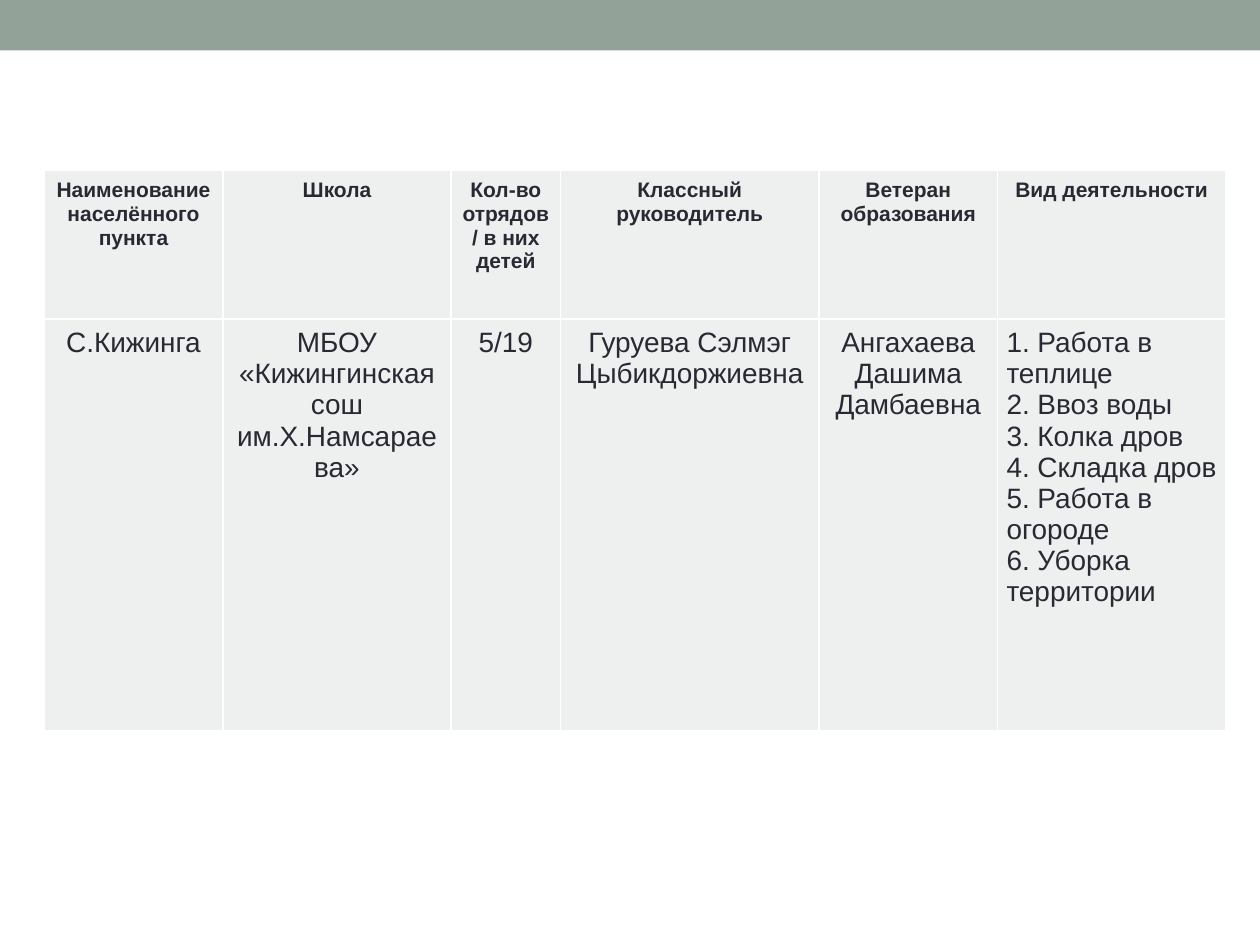
from dataclasses import dataclass

from lxml.etree import SubElement
from pptx import Presentation
from pptx.dml.color import RGBColor
from pptx.enum.shapes import MSO_SHAPE
from pptx.enum.text import PP_ALIGN
from pptx.oxml.ns import qn
from pptx.util import Inches, Pt


@dataclass(frozen=True)
class Theme:
    font: str = "Arial"
    ink: str = "292934"
    band: str = "93A299"
    cell: str = "EEF0EF"
    rule: str = "FFFFFF"
    head: int = 12
    body: int = 16


THEME = Theme()
COLS = [1.42, 1.81, 0.87, 2.05, 1.42, 1.81]
ROWS = [1.18, 3.27]
HEADS = [
    "Наименование населённого пункта",
    "Школа",
    "Кол-во отрядов / в них детей",
    "Классный руководитель",
    "Ветеран образования",
    "Вид деятельности",
]
FACTS = [
    "С.Кижинга",
    "МБОУ «Кижингинская сош им.Х.Намсараева»",
    "5/19",
    "Гуруева Сэлмэг Цыбикдоржиевна",
    "Ангахаева Дашима Дамбаевна",
]
TASKS = [
    "1. Работа в теплице",
    "2. Ввоз воды",
    "3. Колка дров",
    "4. Складка дров",
    "5. Работа в огороде",
    "6. Уборка территории",
]


def color(code):
    return RGBColor.from_string(code)


def add_band(slide):
    band = slide.shapes.add_shape(
        MSO_SHAPE.RECTANGLE, 0, 0, Inches(10), Inches(0.4))
    band.shadow.inherit = False
    band.fill.solid()
    band.fill.fore_color.rgb = color(THEME.band)
    band.line.fill.background()


def add_rules(cell):
    """Draw a thin line on each side of the cell."""
    props = cell._tc.get_or_add_tcPr()
    for side in ("lnL", "lnR", "lnT", "lnB"):
        line = SubElement(props, qn(f"a:{side}"), w=str(Pt(1)))
        fill = SubElement(line, qn("a:solidFill"))
        SubElement(fill, qn("a:srgbClr"), val=THEME.rule)


def fill_cell(cell, lines, size, bold=False, align=PP_ALIGN.CENTER):
    add_rules(cell)
    cell.fill.solid()
    cell.fill.fore_color.rgb = color(THEME.cell)
    cell.margin_left = cell.margin_right = Inches(0.07)
    cell.margin_top = cell.margin_bottom = Inches(0.07)
    frame = cell.text_frame
    for i, line in enumerate(lines):
        para = frame.add_paragraph() if i else frame.paragraphs[0]
        para.alignment = align
        run = para.add_run()
        run.text = line
        run.font.name = THEME.font
        run.font.size = Pt(size)
        run.font.bold = bold
        run.font.color.rgb = color(THEME.ink)


def add_grid(slide):
    table = slide.shapes.add_table(
        len(ROWS), len(COLS), Inches(0.35), Inches(1.35),
        Inches(sum(COLS)), Inches(sum(ROWS))).table
    for col, width in zip(table.columns, COLS):
        col.width = Inches(width)
    for row, height in zip(table.rows, ROWS):
        row.height = Inches(height)
    for i, text in enumerate(HEADS):
        fill_cell(table.cell(0, i), [text], THEME.head, bold=True)
    for i, text in enumerate(FACTS):
        fill_cell(table.cell(1, i), [text], THEME.body)
    fill_cell(table.cell(1, len(FACTS)), TASKS, THEME.body,
              align=PP_ALIGN.LEFT)


def main():
    deck = Presentation()
    deck.slide_width = Inches(10)
    deck.slide_height = Inches(7.5)
    slide = deck.slides.add_slide(deck.slide_layouts[6])
    add_band(slide)
    add_grid(slide)
    deck.save("out.pptx")


if __name__ == "__main__":
    main()
